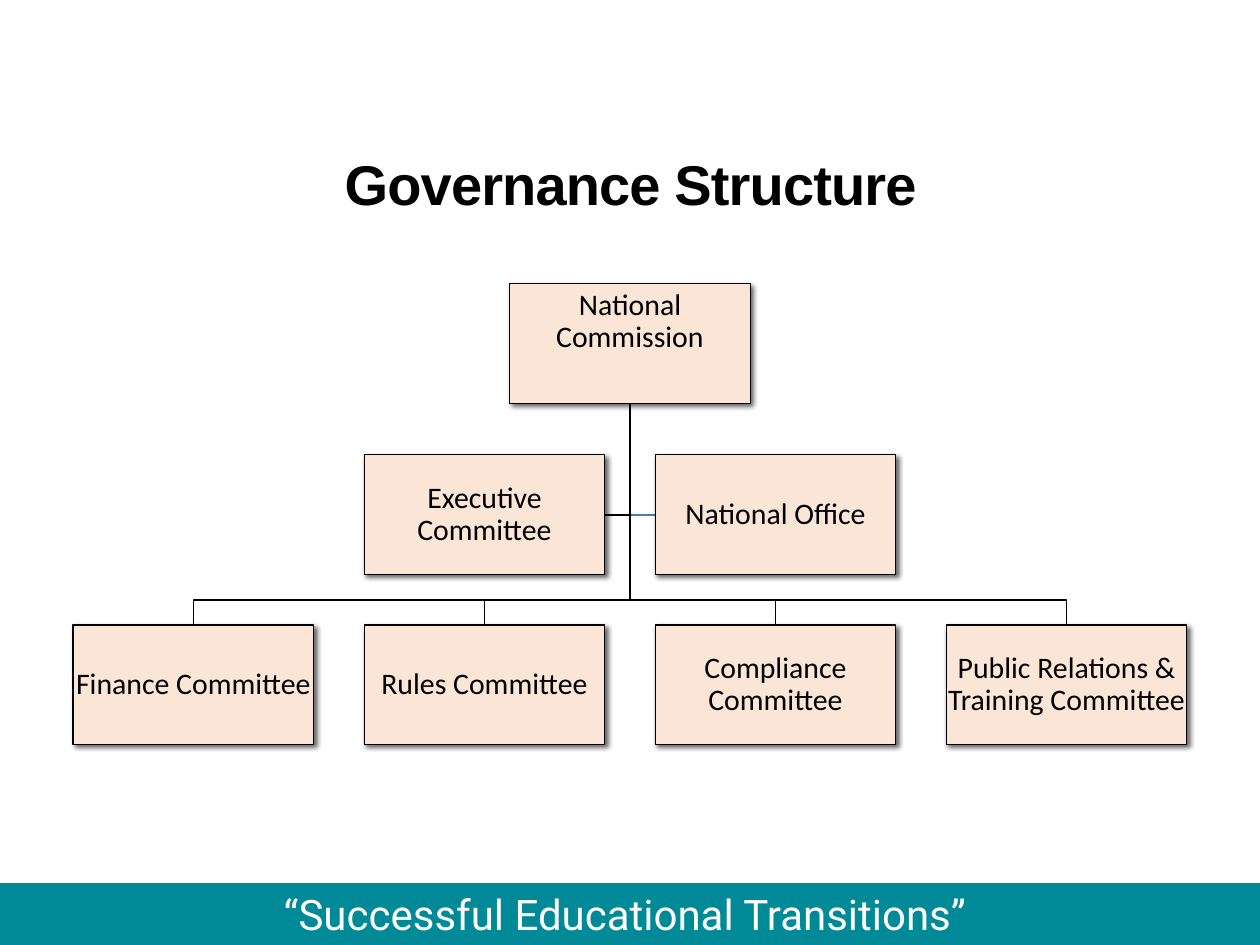
from dataclasses import dataclass

from lxml import etree
from pptx import Presentation
from pptx.dml.color import RGBColor
from pptx.enum.shapes import MSO_SHAPE
from pptx.enum.text import MSO_ANCHOR, PP_ALIGN
from pptx.oxml.ns import qn
from pptx.util import Inches, Pt

RECTANGLE = MSO_SHAPE.RECTANGLE
MIDDLE = MSO_ANCHOR.MIDDLE
TOP = MSO_ANCHOR.TOP
CENTER = PP_ALIGN.CENTER

BLACK, WHITE = "000000", "FFFFFF"
PEACH, TEAL, BLUE = "FBE5D6", "008996", "497CAB"

# Chart grid, in inches
CHART_CENTER = 5
COLUMN_PITCH = 2.31
BOX_WIDTH, BOX_HEIGHT = 1.91, 0.95
TOP_ROW, MIDDLE_ROW, BOTTOM_ROW = 2.25, 3.61, 4.96
TRUNK_TOP = TOP_ROW + BOX_HEIGHT
BRANCH_Y = BOTTOM_ROW - 0.2
INSET = 0.01


@dataclass
class Box:
    text: str
    column: float  # 0 to 3; 1.5 is the centre of the chart
    top: float
    bottom_inset: float = INSET

    @property
    def center(self) -> float:
        return CHART_CENTER + (self.column - 1.5) * COLUMN_PITCH

    @property
    def left(self) -> float:
        return self.center - BOX_WIDTH / 2


COMMISSION = Box("National Commission", 1.5, TOP_ROW, 0.35)
EXECUTIVE = Box("Executive Committee", 1, MIDDLE_ROW)
OFFICE = Box("National Office", 2, MIDDLE_ROW)
COMMITTEES = [
    Box(name, column, BOTTOM_ROW)
    for column, name in enumerate([
        "Finance Committee",
        "Rules Committee",
        "Compliance Committee",
        "Public Relations & Training Committee",
    ])
]


def color(value: str) -> RGBColor:
    return RGBColor.from_string(value)


def write_text(shape, text: str, size: float, font: str, text_color: str,
               anchor=MIDDLE, line_spacing: float = 1.0):
    """Fill a shape with one centred paragraph and return it."""
    frame = shape.text_frame
    frame.word_wrap = True
    frame.vertical_anchor = anchor
    paragraph = frame.paragraphs[0]
    paragraph.text = text
    paragraph.alignment = CENTER
    paragraph.line_spacing = line_spacing
    paragraph.font.size = Pt(size)
    paragraph.font.name = font
    paragraph.font.color.rgb = color(text_color)
    return paragraph


def add_rectangle(slide, left: float, top: float, width: float, height: float,
                  fill: str):
    shape = slide.shapes.add_shape(
        RECTANGLE, Inches(left), Inches(top), Inches(width), Inches(height))
    shape.shadow.inherit = False
    shape.fill.solid()
    shape.fill.fore_color.rgb = color(fill)
    shape.line.fill.background()
    return shape


def add_text_box(slide, left: float, top: float, width: float, height: float):
    return slide.shapes.add_textbox(
        Inches(left), Inches(top), Inches(width), Inches(height))


def add_drop_shadow(shape) -> None:
    effects = shape._element.spPr.find(qn("a:effectLst"))
    shadow = etree.SubElement(
        effects, qn("a:outerShdw"), blurRad=str(Pt(3)), dist=str(Pt(2)),
        dir=str(45 * 60000), algn="tl", rotWithShape="0")
    shade = etree.SubElement(shadow, qn("a:srgbClr"), val=BLACK)
    etree.SubElement(shade, qn("a:alpha"), val="60000")


def add_box(slide, box: Box) -> None:
    shape = add_rectangle(
        slide, box.left, box.top, BOX_WIDTH, BOX_HEIGHT, PEACH)
    shape.line.color.rgb = color(BLACK)
    shape.line.width = Pt(0.75)
    add_drop_shadow(shape)
    frame = shape.text_frame
    frame.margin_left = frame.margin_right = frame.margin_top = Inches(INSET)
    frame.margin_bottom = Inches(box.bottom_inset)
    write_text(shape, box.text, 17, "Calibri", BLACK, line_spacing=0.9)


def add_elbow(slide, points: list[tuple[float, float]], line_color: str) -> None:
    corners = [(Inches(x), Inches(y)) for x, y in points]
    builder = slide.shapes.build_freeform(*corners[0])
    builder.add_line_segments(corners[1:], close=False)
    shape = builder.convert_to_shape()
    shape.shadow.inherit = False
    shape.fill.background()
    shape.line.color.rgb = color(line_color)
    shape.line.width = Pt(1)


def main() -> None:
    presentation = Presentation()
    presentation.slide_width = Inches(10)
    presentation.slide_height = Inches(7.5)
    slide = presentation.slides.add_slide(presentation.slide_layouts[6])

    # Footer band and motto
    add_rectangle(slide, 0, 7.01, 10, 0.49, TEAL)
    motto = add_text_box(slide, 1.75, 7, 6.42, 0.5)
    write_text(motto, "“Successful Educational Transitions”", 24, "Roboto",
               WHITE, anchor=TOP)

    # Title
    title = add_text_box(slide, 0.88, 1.08, 8.25, 0.83)
    heading = write_text(title, "Governance Structure", 32, "Arial", BLACK,
                         line_spacing=0.85)
    heading.font.bold = True
    heading.runs[0]._r.get_or_add_rPr().set("spc", "-50")

    # Lines from the commission to the side boxes
    side_y = MIDDLE_ROW + BOX_HEIGHT / 2
    trunk = (CHART_CENTER, TRUNK_TOP)
    for edge, line_color in [(OFFICE.left, BLUE),
                             (EXECUTIVE.left + BOX_WIDTH, BLACK)]:
        add_elbow(slide, [trunk, (CHART_CENTER, side_y), (edge, side_y)],
                  line_color)

    # Lines from the commission to the committees
    for box in COMMITTEES:
        add_elbow(slide, [trunk, (CHART_CENTER, BRANCH_Y),
                          (box.center, BRANCH_Y), (box.center, BOTTOM_ROW)],
                  BLACK)

    # Boxes
    for box in [COMMISSION, *COMMITTEES, EXECUTIVE, OFFICE]:
        add_box(slide, box)

    presentation.save("out.pptx")


if __name__ == "__main__":
    main()
